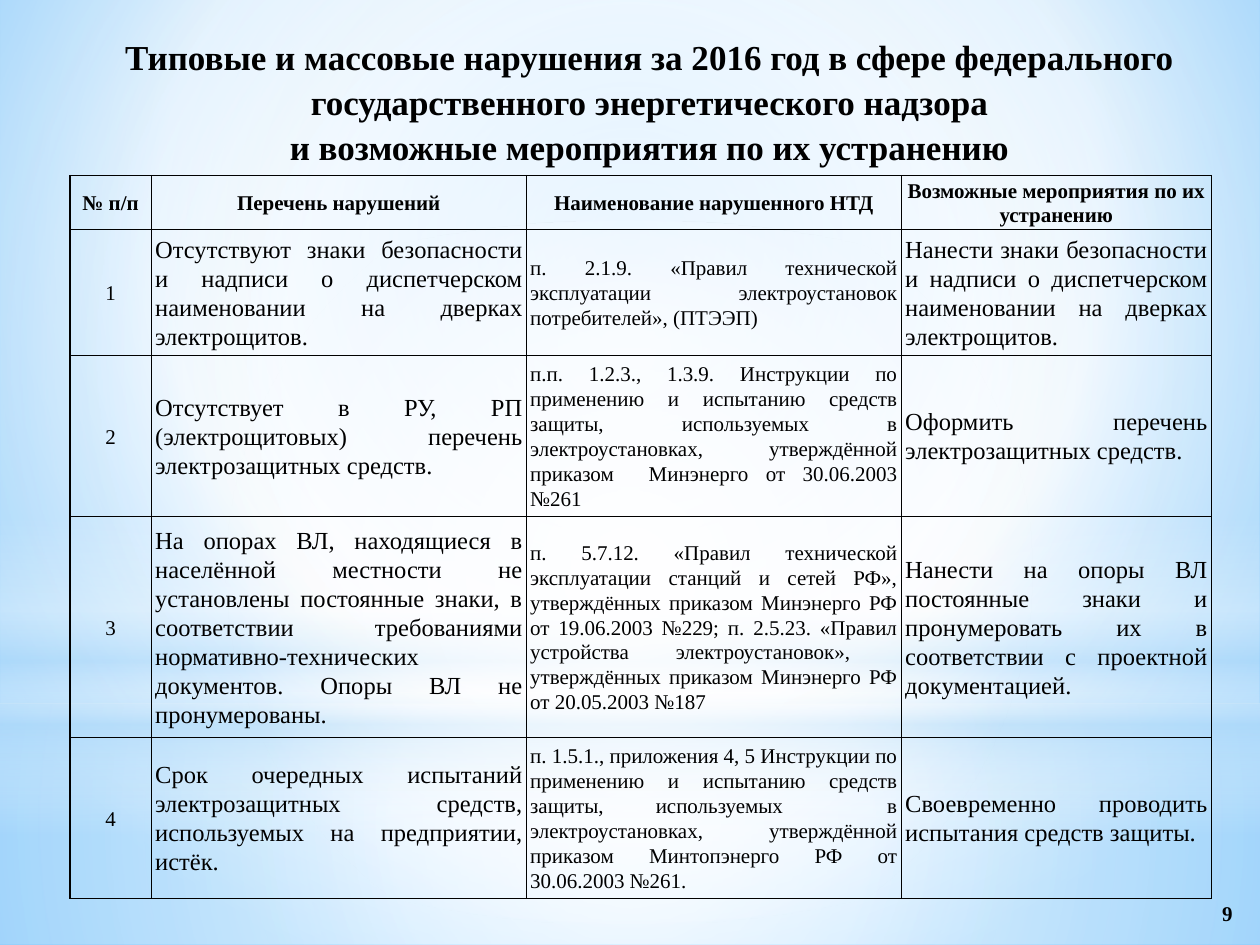
from lxml import etree
from pptx import Presentation
from pptx.dml.color import RGBColor
from pptx.enum.shapes import MSO_SHAPE as Shape
from pptx.enum.text import MSO_ANCHOR as Anchor, PP_ALIGN as Align
from pptx.oxml import parse_xml
from pptx.oxml.ns import nsdecls, qn
from pptx.util import Pt

BLACK = RGBColor(0x00, 0x00, 0x00)
WHITE = RGBColor(0xFF, 0xFF, 0xFF)
PALE = RGBColor(0xB4, 0xDC, 0xFA)
SKY = RGBColor(0x9E, 0xD5, 0xFF)
BLUE = RGBColor(0x5B, 0xB9, 0xFF)

CENTRE = (50, 50, 50, 50)
TITLE = [
    "Типовые и массовые нарушения за 2016 год в сфере федерального "
    "государственного энергетического надзора",
    "и возможные мероприятия по их устранению",
]
HEADINGS = ["№ п/п", "Перечень нарушений", "Наименование нарушенного НТД",
            "Возможные мероприятия по их устранению"]
VIOLATIONS = [
    ("Отсутствуют знаки безопасности и надписи о диспетчерском наименовании "
     "на дверках электрощитов.",
     "п. 2.1.9. «Правил технической эксплуатации электроустановок "
     "потребителей», (ПТЭЭП)",
     "Нанести знаки безопасности и надписи о диспетчерском наименовании "
     "на дверках электрощитов."),
    ("Отсутствует в РУ, РП (электрощитовых) перечень электрозащитных средств.",
     "п.п. 1.2.3., 1.3.9. Инструкции по применению и испытанию средств "
     "защиты, используемых в электроустановках, утверждённой приказом  "
     "Минэнерго от 30.06.2003 №261",
     "Оформить  перечень электрозащитных средств."),
    ("На опорах ВЛ, находящиеся в населённой местности не установлены "
     "постоянные знаки, в соответствии требованиями нормативно-технических "
     "документов. Опоры ВЛ не пронумерованы.",
     "п. 5.7.12. «Правил технической эксплуатации станций и сетей РФ», "
     "утверждённых приказом Минэнерго РФ от 19.06.2003 №229; п. 2.5.23. "
     "«Правил устройства электроустановок»,  утверждённых приказом Минэнерго "
     "РФ от 20.05.2003 №187 ",
     "Нанести на опоры ВЛ постоянные знаки и пронумеровать их в соответствии "
     "с проектной документацией."),
    ("Срок очередных испытаний электрозащитных средств, используемых на "
     "предприятии, истёк.",
     "п. 1.5.1., приложения 4, 5 Инструкции по применению и испытанию средств "
     "защиты, используемых  в электроустановках, утверждённой приказом "
     "Минтопэнерго РФ от 30.06.2003 №261.",
     "Своевременно проводить испытания средств защиты."),
]
COLUMN_WIDTHS = [46.6, 214.3, 214.3, 177.1]
ROW_HEIGHTS = [31, 72, 92, 126.3, 92]


def gradient(stops, focus=None):
    """Gradient of (position, colour, opacity): round if focus, else downward."""
    marks = "".join(
        f'<a:gs pos="{pos * 1000}"><a:srgbClr val="{colour}">'
        f'<a:alpha val="{opacity * 1000}"/></a:srgbClr></a:gs>'
        for pos, colour, opacity in stops)
    if focus:
        left, top, right, bottom = (side * 1000 for side in focus)
        course = (f'<a:path path="circle"><a:fillToRect l="{left}" t="{top}" '
                  f'r="{right}" b="{bottom}"/></a:path>')
    else:
        course = '<a:lin ang="5400000" scaled="0"/>'
    return parse_xml(f'<a:gradFill {nsdecls("a")} rotWithShape="1">'
                     f'<a:gsLst>{marks}</a:gsLst>{course}</a:gradFill>')


class SlideBuilder:
    font = "Times New Roman"
    line_spacing = 1.07

    def __init__(self, slide):
        self.slide = slide

    def background(self, stops, focus):
        self.slide.background.fill.solid()
        solid = self.slide.element.find(".//" + qn("p:bgPr")).find(qn("a:solidFill"))
        solid.getparent().replace(solid, gradient(stops, focus))

    def glow(self, kind, top, height, stops, focus=None):
        shape = self.slide.shapes.add_shape(kind, 0, Pt(top), Pt(720), Pt(height))
        shape.shadow.inherit = False
        shape.line.fill.background()
        shape.fill.solid()
        solid = shape.element.spPr.find(qn("a:solidFill"))
        solid.getparent().replace(solid, gradient(stops, focus))

    def add_text(self, frame, paragraphs, size, align, bold=False, spacing=None):
        frame.word_wrap = True
        for index, text in enumerate(paragraphs):
            para = frame.add_paragraph() if index else frame.paragraphs[0]
            para.alignment = align
            para.line_spacing = spacing or self.line_spacing
            para.space_before = para.space_after = Pt(0)
            run = para.add_run()
            run.text = text
            run.font.name = self.font
            run.font.size = Pt(size)
            run.font.bold = bold
            run.font.color.rgb = BLACK

    def title(self, paragraphs, left, top, width, height):
        heading = self.slide.shapes.title
        heading.left, heading.top = Pt(left), Pt(top)
        heading.width, heading.height = Pt(width), Pt(height)
        heading.text_frame.vertical_anchor = Anchor.TOP
        self.add_text(heading.text_frame, paragraphs, 20, Align.CENTER, bold=True)
        # Bring the title in front of the glows
        heading.element.getparent().append(heading.element)

    def page_number(self, number, left, top, width, height):
        box = self.slide.shapes.add_textbox(Pt(left), Pt(top), Pt(width), Pt(height))
        box.text_frame.vertical_anchor = Anchor.MIDDLE
        self.add_text(box.text_frame, [number], 12, Align.RIGHT, bold=True, spacing=1.0)

    def cell(self, cell, text, size, align, bold):
        cell.margin_left = cell.margin_right = Pt(2.2)
        cell.margin_top = cell.margin_bottom = 0
        cell.vertical_anchor = Anchor.MIDDLE
        cell.fill.background()
        self.add_text(cell.text_frame, [text], size, align, bold)
        # Borders go before the fill
        properties = cell._tc.get_or_add_tcPr()
        for index, side in enumerate(("lnL", "lnR", "lnT", "lnB")):
            border = etree.Element(qn(f"a:{side}"), w=str(Pt(1)))
            ink = etree.SubElement(border, qn("a:solidFill"))
            etree.SubElement(ink, qn("a:srgbClr"), val=str(BLACK))
            properties.insert(index, border)

    def table(self, rows, left, top, widths, heights):
        table = self.slide.shapes.add_table(
            len(rows), len(widths), Pt(left), Pt(top),
            Pt(sum(widths)), Pt(sum(heights))).table
        table.first_row = table.horz_banding = False
        for column, width in zip(table.columns, widths):
            column.width = Pt(width)
        for r, (row, height) in enumerate(zip(rows, heights)):
            table.rows[r].height = Pt(height)
            for c, text in enumerate(row):
                is_heading = r == 0
                align = Align.CENTER if is_heading or c == 0 else Align.JUSTIFY
                size = 14 if not is_heading and c in (1, 3) else 12
                self.cell(table.cell(r, c), text, size, align, is_heading)


def main():
    deck = Presentation()
    deck.slide_width, deck.slide_height = Pt(720), Pt(540)
    page = SlideBuilder(deck.slides.add_slide(deck.slide_layouts[5]))

    # Sky backdrop
    page.background([(0, SKY, 100), (60, WHITE, 100), (100, BLUE, 100)],
                    (20, 10, 20, 60))
    page.glow(Shape.RECTANGLE, 401.8, 138.2,
              [(0, WHITE, 91), (37, WHITE, 76), (100, PALE, 79)], CENTRE)
    page.glow(Shape.RECTANGLE, 0, 401.8,
              [(0, WHITE, 89), (48, WHITE, 62), (100, PALE, 79)], CENTRE)
    page.glow(Shape.RECTANGLE, 296.6, 180,
              [(0, WHITE, 0), (29, WHITE, 30), (45, PALE, 40),
               (55, WHITE, 26), (65, PALE, 60), (100, WHITE, 0)])
    page.glow(Shape.OVAL, 126, 401.8, [(0, WHITE, 100), (56, WHITE, 0)], CENTRE)

    # Heading, table of violations, page number
    page.title(TITLE, 42.5, 15.1, 657.4, 85)
    rows = [HEADINGS] + [(str(number), *violation)
                         for number, violation in enumerate(VIOLATIONS, 1)]
    page.table(rows, 39.9, 100.3, COLUMN_WIDTHS, ROW_HEIGHTS)
    page.page_number("9", 567.4, 507.6, 144, 28.8)

    deck.save("out.pptx")


if __name__ == "__main__":
    main()
